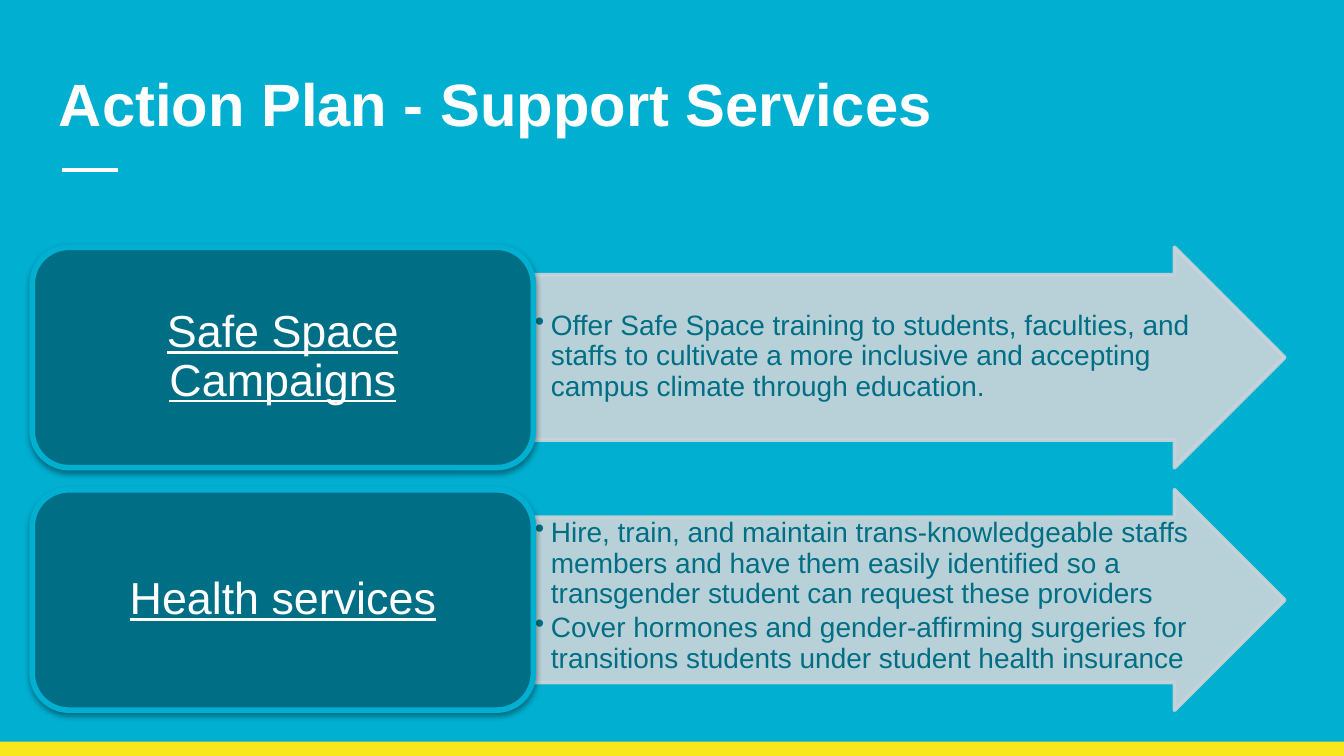
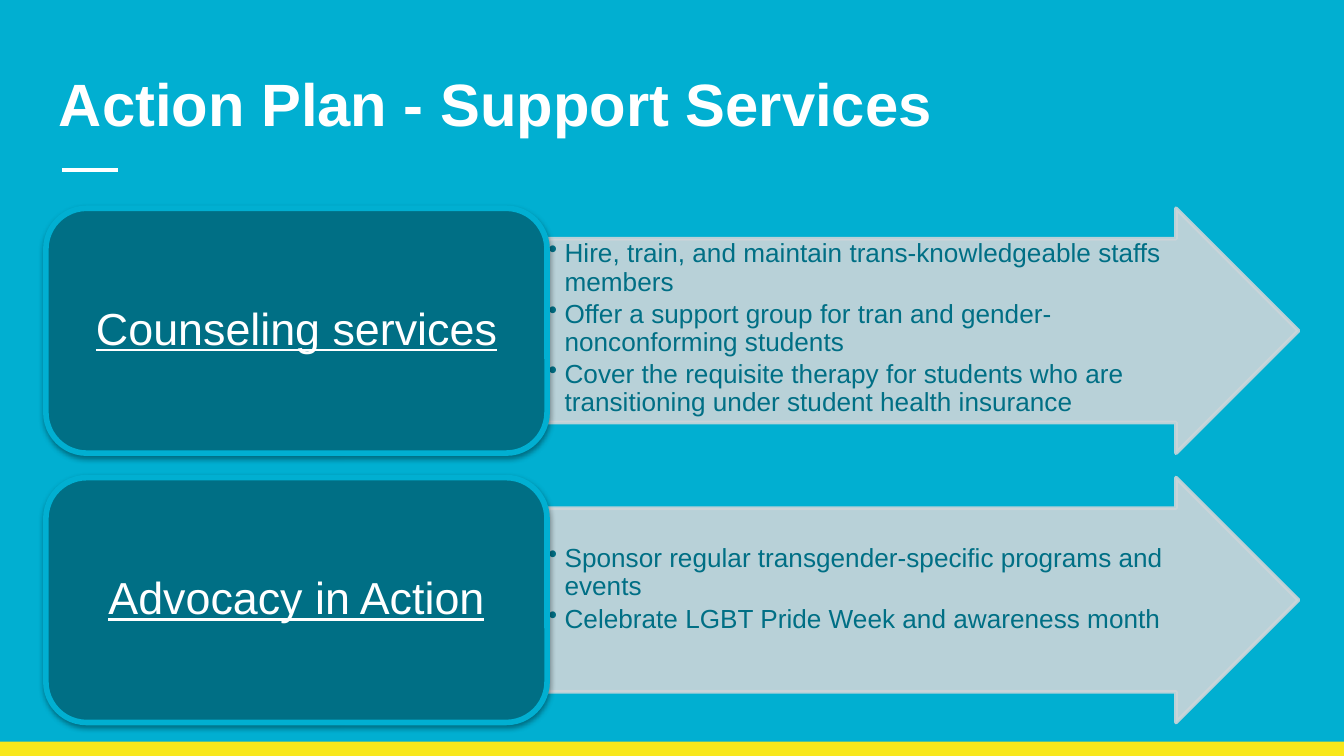
from lxml.etree import SubElement as Sub
from pptx import Presentation
from pptx.dml.color import RGBColor
from pptx.enum.shapes import MSO_CONNECTOR as Link, MSO_SHAPE as Kind
from pptx.enum.text import MSO_ANCHOR as Anchor, PP_ALIGN as Align
from pptx.oxml.ns import qn
from pptx.util import Pt

# Shared colours, font and sizes
CYAN = RGBColor(0x01, 0xAF, 0xD1)
TEAL = RGBColor(0x00, 0x6F, 0x85)
GREY = RGBColor(0xCC, 0xD5, 0xD9)
GOLD = RGBColor(0xF8, 0xE7, 0x1C)
WHITE = RGBColor(0xFF, 0xFF, 0xFF)
FONT = "Arial"
WIDE, HIGH = 720, 405
CARD_W, ARROW_W = 268.5, 402.5
PITCH = 1.1  # row step as a share of row height
DROP = 19  # extra top space for short lists
HANG = 8.64

# Slide content: left, top, row height, list size, rows (label, drop, items)
SLIDES = [
    (17.3, 132.5, 118.1, 15, [
        ("Safe Space Campaigns", DROP, [
            "Offer Safe Space training to students, faculties, and staffs to "
            "cultivate a more inclusive and accepting campus climate through "
            "education."]),
        ("Health services", 0, [
            "Hire, train, and maintain trans-knowledgeable staffs members and "
            "have them easily identified so a transgender student can request "
            "these providers",
            "Cover hormones and gender-affirming surgeries for transitions "
            "students under student health insurance"]),
    ]),
    (24.6, 111.6, 131.2, 14, [
        ("Counseling services", 0, [
            "Hire, train, and maintain trans-knowledgeable staffs members",
            "Offer a support group for tran and gender-nonconforming students",
            "Cover the requisite therapy for students who are transitioning "
            "under student health insurance"]),
        ("Advocacy in Action", DROP, [
            "Sponsor regular transgender-specific programs and events",
            "Celebrate LGBT Pride Week and awareness month"]),
    ]),
]


def write(shape, lines, size, color, bold=False, under=False, align=Align.LEFT,
          anchor=Anchor.MIDDLE, pads=(7.2, 7.2, 7.2, 7.2), pitch=1.0, after=0,
          bullet=False):
    """Fill a shape with one paragraph per line."""
    frame = shape.text_frame
    frame.word_wrap = True
    frame.vertical_anchor = anchor
    (frame.margin_left, frame.margin_top,
     frame.margin_right, frame.margin_bottom) = map(Pt, pads)
    for i, line in enumerate(lines):
        para = frame.add_paragraph() if i else frame.paragraphs[0]
        para.alignment = align
        para.line_spacing = pitch
        para.space_after = Pt(after)
        run = para.add_run()
        run.text = line
        font = run.font
        font.name, font.size, font.bold = FONT, Pt(size), bold
        font.underline = under
        font.color.rgb = color
        if bullet:
            dot(para)


def dot(para):
    """Give a paragraph a hanging bullet."""
    props = para._p.get_or_add_pPr()
    props.set("marL", str(Pt(HANG)))
    props.set("indent", str(-Pt(HANG)))
    Sub(props, qn("a:buChar"), char="•")


def block(slide, kind, box, fill, line=None, width=0):
    """Add a flat preset shape; box is left, top, width, height."""
    shape = slide.shapes.add_shape(kind, *map(Pt, box))
    shape.shadow.inherit = False
    shape.fill.solid()
    shape.fill.fore_color.rgb = fill
    if line is None:
        shape.line.fill.background()
    else:
        shape.line.color.rgb = line
        shape.line.width = Pt(width)
        Sub(shape.element.spPr.find(qn("a:ln")), qn("a:round"))
    return shape


def fade(node, share):
    """Set the opacity of every colour under a node, in percent."""
    for color in list(node.iter(qn("a:srgbClr"))):
        Sub(color, qn("a:alpha"), val=str(share * 1000))


def shade(shape):
    """Drop a soft black shadow below a shape."""
    effects = shape.element.spPr.find(qn("a:effectLst"))
    cast = Sub(effects, qn("a:outerShdw"), blurRad=str(Pt(3.1)),
               dist=str(Pt(1.6)), dir="5400000", rotWithShape="0")
    Sub(cast, qn("a:srgbClr"), val="000000")
    fade(cast, 38)


def base(deck, title):
    """Start a slide with background, footer band, rule and title."""
    slide = deck.slides.add_slide(deck.slide_layouts[6])
    slide.background.fill.solid()
    slide.background.fill.fore_color.rgb = CYAN
    block(slide, Kind.RECTANGLE, (0, 397.4, WIDE, HIGH - 397.4), GOLD)
    rule = slide.shapes.add_connector(
        Link.STRAIGHT, Pt(33.2), Pt(91), Pt(63.2), Pt(91))
    rule.line.color.rgb = WHITE
    rule.line.width = Pt(2.25)
    Sub(rule.element.spPr, qn("a:effectLst"))
    head = slide.shapes.add_textbox(Pt(24.5), Pt(29.5), Pt(671), Pt(51))
    write(head, [title], 32, WHITE, bold=True)
    return slide


def arrow(slide, box, items, size, drop):
    """Add a pale arrow that holds a bulleted list."""
    shape = block(slide, Kind.RIGHT_ARROW, box, GREY, GREY, 2)
    shape.adjustments[0], shape.adjustments[1] = 0.75, 0.5
    fade(shape.element.spPr, 90)
    write(shape, items, size, TEAL, anchor=Anchor.TOP, pitch=0.9,
          pads=(0.7, 0.7 + drop, 0.7, 0.7), after=0.15 * size, bullet=True)


def card(slide, box, label):
    """Add a rounded teal card with an underlined label."""
    shape = block(slide, Kind.ROUNDED_RECTANGLE, box, TEAL, CYAN, 3)
    shade(shape)
    write(shape, [label], 24, WHITE, under=True, align=Align.CENTER, pitch=0.9)


def main():
    deck = Presentation()
    deck.slide_width, deck.slide_height = Pt(WIDE), Pt(HIGH)
    for left, top, tall, size, rows in SLIDES:
        slide = base(deck, "Action Plan - Support Services")
        for i, (label, drop, items) in enumerate(rows):
            y = top + i * PITCH * tall
            arrow(slide, (left + CARD_W, y, ARROW_W, tall), items, size, drop)
            card(slide, (left, y, CARD_W, tall), label)
    deck.save("out.pptx")


if __name__ == "__main__":
    main()
